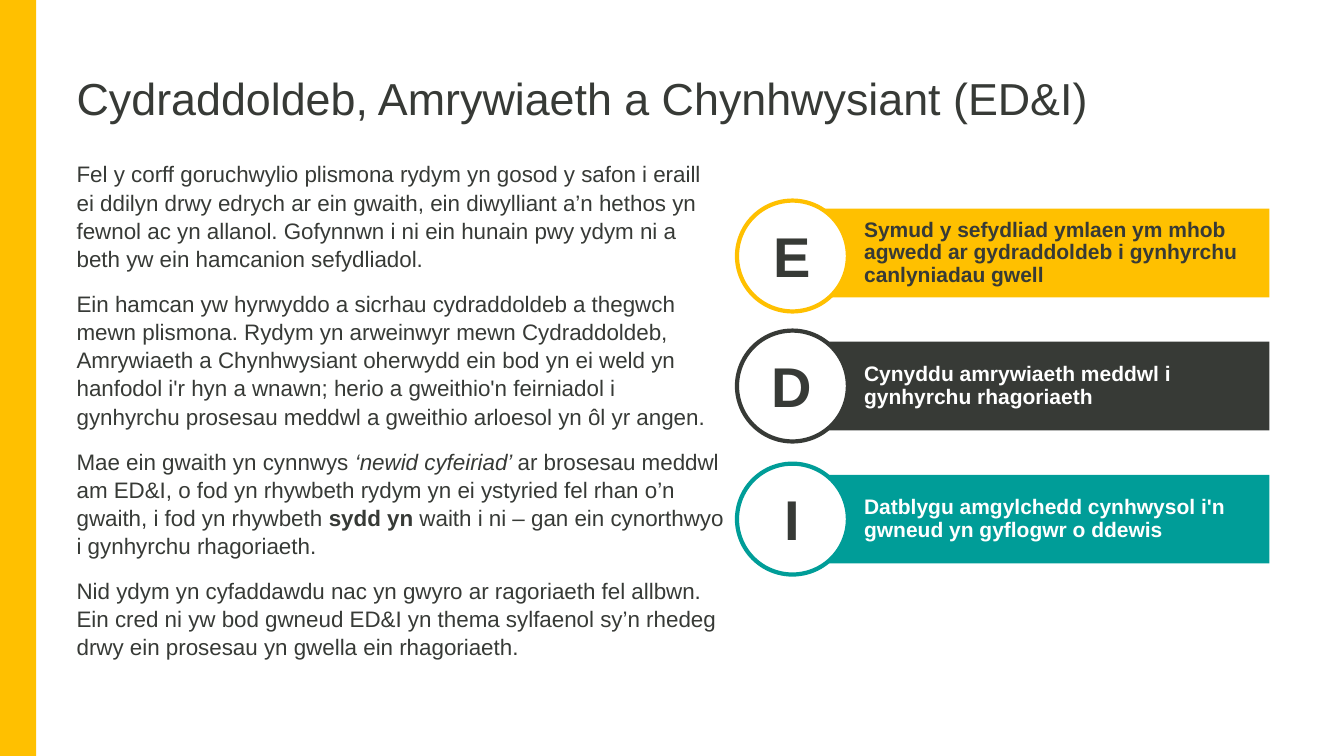
from pptx import Presentation
from pptx.dml.color import RGBColor
from pptx.enum.shapes import MSO_SHAPE as Preset
from pptx.enum.text import MSO_ANCHOR as Anchor, PP_ALIGN as Align
from pptx.util import Pt

PX = 9144  # EMU per px, 100 px to the inch
YELLOW, CHARCOAL, TEAL, WHITE = "FFC000", "373A36", "009D98", "FFFFFF"

TITLE = "Cydraddoldeb, Amrywiaeth a Chynhwysiant (ED&I)"
# Each paragraph is a list of (text, extra font values)
BODY = [
    [("Fel y corff goruchwylio plismona rydym yn gosod y safon i eraill ei ddilyn "
      "drwy edrych ar ein gwaith, ein diwylliant a’n hethos yn fewnol ac yn allanol. "
      "Gofynnwn i ni ein hunain pwy ydym ni a beth yw ein hamcanion sefydliadol.", {})],
    [("Ein hamcan yw hyrwyddo a sicrhau cydraddoldeb a thegwch mewn plismona. Rydym yn "
      "arweinwyr mewn Cydraddoldeb, Amrywiaeth a Chynhwysiant oherwydd ein bod yn ei "
      "weld yn hanfodol i'r hyn a wnawn; herio a gweithio'n feirniadol i gynhyrchu "
      "prosesau meddwl a gweithio arloesol yn ôl yr angen.", {})],
    [("Mae ein gwaith yn cynnwys ", {}),
     ("‘newid cyfeiriad’ ", {"italic": True}),
     ("ar brosesau meddwl am ED&I, o fod yn rhywbeth rydym yn ei ystyried fel rhan "
      "o’n gwaith, i fod yn rhywbeth ", {}),
     ("sydd yn", {"bold": True}),
     (" waith i ni – gan ein cynorthwyo i gynhyrchu rhagoriaeth.", {})],
    [("Nid ydym yn cyfaddawdu nac yn gwyro ar ragoriaeth fel allbwn. Ein cred ni yw bod "
      "gwneud ED&I yn thema sylfaenol sy’n rhedeg drwy ein prosesau yn gwella ein "
      "rhagoriaeth.", {})],
]
# Letter, circle top, accent colour, text colour, text
GOALS = [
    ("E", 199, YELLOW, CHARCOAL,
     "Symud y sefydliad ymlaen ym mhob agwedd ar gydraddoldeb i gynhyrchu "
     "canlyniadau gwell"),
    ("D", 328, CHARCOAL, WHITE, "Cynyddu amrywiaeth meddwl i gynhyrchu rhagoriaeth"),
    ("I", 460, TEAL, WHITE,
     "Datblygu amgylchedd cynhwysol i'n gwneud yn gyflogwr o ddewis"),
]
BAR_TOP, BAR_PITCH = 207, 132


def rgb(value):
    return RGBColor.from_string(value)


def set_values(target, values):
    for name, value in values.items():
        setattr(target, name, value)


class SlideBuilder:
    font_name = "Arial"

    def __init__(self, slide):
        self.shapes = slide.shapes

    def shape(self, preset, place, fill, line=None):
        item = self.shapes.add_shape(preset, *(n * PX for n in place))
        item.shadow.inherit = False
        item.fill.solid()
        item.fill.fore_color.rgb = rgb(fill)
        if line:
            item.line.color.rgb = rgb(line)
            item.line.width = Pt(3)
        else:
            item.line.fill.background()
        return item

    def text_box(self, place, paragraphs, **style):
        box = self.shapes.add_textbox(*(n * PX for n in place))
        self.fill_text(box, paragraphs, **style)

    def fill_text(self, box, paragraphs, size, color=CHARCOAL, bold=False,
                  insets=(0, 0, 0, 0), anchor=Anchor.TOP, **para_format):
        """Fill a shape with paragraphs; insets run left, top, right, bottom."""
        frame = box.text_frame
        sides = ("margin_left", "margin_top", "margin_right", "margin_bottom")
        set_values(frame, {"word_wrap": True, "vertical_anchor": anchor})
        set_values(frame, {side: n * PX for side, n in zip(sides, insets)})
        for index, spans in enumerate(paragraphs):
            para = frame.add_paragraph() if index else frame.paragraphs[0]
            set_values(para, {"alignment": Align.LEFT, **para_format})
            for text, extra in spans:
                span = para.add_run()
                span.text = text
                set_values(span.font, {"name": self.font_name, "size": Pt(size),
                                       "bold": bold, **extra})
                span.font.color.rgb = rgb(color)


def main():
    deck = Presentation()
    set_values(deck, {"slide_width": 1333 * PX, "slide_height": 750 * PX})
    page = SlideBuilder(deck.slides.add_slide(deck.slide_layouts[6]))

    page.shape(Preset.RECTANGLE, (0, 0, 36, 750), YELLOW)
    page.text_box((76, 76, 1107, 65), [[(TITLE, {})]], size=32, line_spacing=0.9)
    page.text_box((76, 158, 642, 497), BODY, size=16,
                  line_spacing=1.05, space_after=Pt(12))

    for row, (letter, top, accent, color, text) in enumerate(GOALS):
        bar = page.shape(Preset.RECTANGLE,
                         (818, BAR_TOP + row * BAR_PITCH, 441, 88), accent)
        page.fill_text(bar, [[(text, {})]], size=15, color=color, bold=True,
                       insets=(39, 5, 16, 5), anchor=Anchor.MIDDLE,
                       line_spacing=0.9, space_after=Pt(7))
        page.shape(Preset.OVAL, (731, top, 110, 110), WHITE, line=accent)
        page.text_box((753, top + 16, 65, 77), [[(letter, {})]], size=40, bold=True,
                      insets=(10, 5, 10, 5), alignment=Align.CENTER)

    deck.save("out.pptx")


if __name__ == "__main__":
    main()
